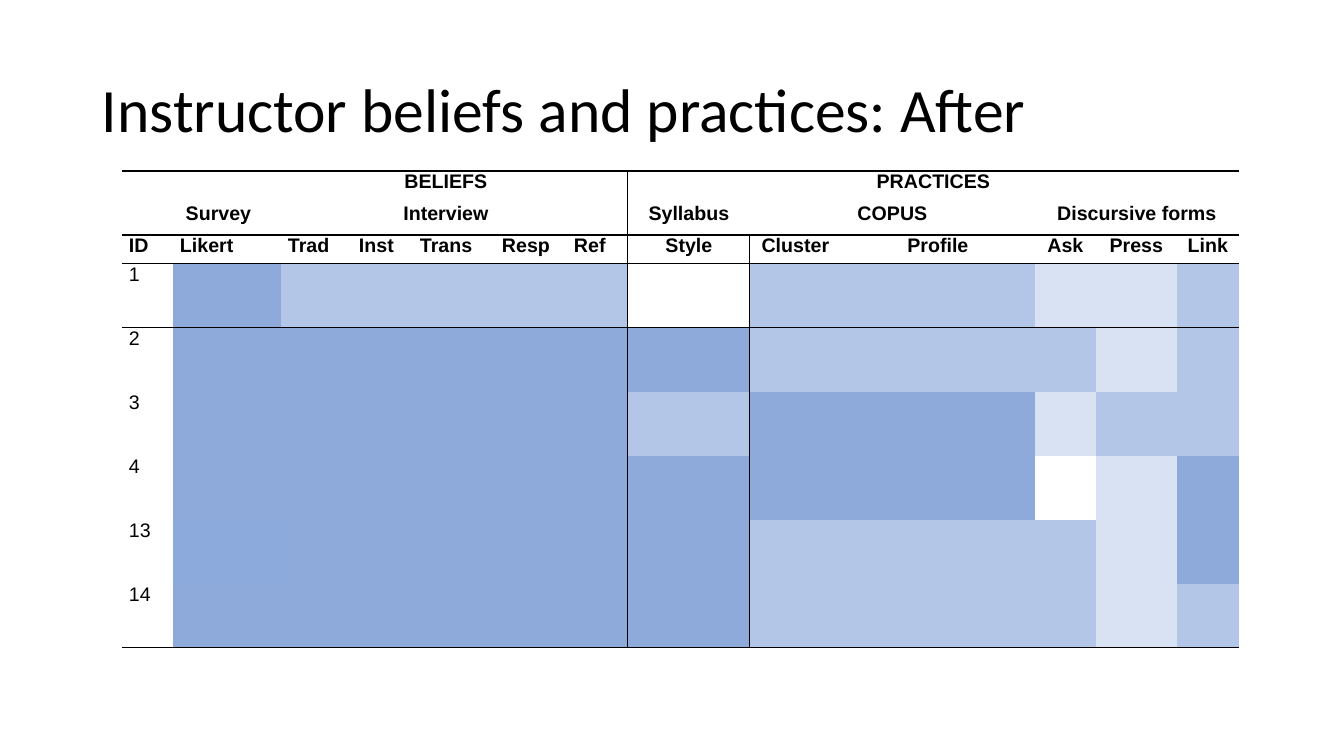
from dataclasses import dataclass

from lxml import etree
from pptx import Presentation
from pptx.dml.color import RGBColor
from pptx.enum.text import MSO_ANCHOR, PP_ALIGN
from pptx.oxml.ns import qn
from pptx.util import Pt

PX = 12192000 / 1344
LEFT, CENTER = PP_ALIGN.LEFT, PP_ALIGN.CENTER
TOP, MIDDLE = MSO_ANCHOR.TOP, MSO_ANCHOR.MIDDLE
PLAIN_TABLE_STYLE = "{2D5ABB26-0587-4C30-8999-92F81FD0307C}"


@dataclass(frozen=True)
class Theme:
    """Colours, typefaces and type sizes of the slide."""

    ink: str = "000000"
    title_face: str = "Calibri"
    table_face: str = "Arial"
    title_size: int = 44
    table_size: int = 14
    cell_gap: float = 2.4
    rule: float = 1
    fine_rule: float = 0.75


THEME = Theme()
SHADES = {"S": "8EAADB", "s": "8DAADC", "M": "B4C6E7", "L": "D9E2F3", "W": "FFFFFF"}

COLUMN_WIDTHS = [51, 91, 17, 71, 61, 82, 72, 61, 122, 91, 194, 61, 81, 62]
ROW_HEIGHTS = [32, 32, 29] + [64] * 6
PRACTICES_COLUMN = 8
RULES = {0: THEME.rule, 2: THEME.rule, 3: THEME.fine_rule, 9: THEME.rule}

GROUP_HEADINGS = [
    (0, 2, 6, "BELIEFS"),
    (0, 8, 6, "PRACTICES"),
    (1, 1, 1, "Survey"),
    (1, 2, 6, "Interview"),
    (1, 8, 1, "Syllabus"),
    (1, 9, 2, "COPUS"),
    (1, 11, 3, "Discursive forms"),
]
MEASURES = ["Likert", "Trad", "Inst", "Trans", "Resp", "Ref",
            "Style", "Cluster", "Profile", "Ask", "Press", "Link"]
INSTRUCTORS = {
    "1": "SMMMMM.MMLLM",
    "2": "SSSSSSSMMMLM",
    "3": "SSSSSSMSSLMM",
    "4": "SSSSSSSSSWLS",
    "13": "sSSSSSSMMMLS",
    "14": "SSSSSSSMMMLM",
}


def px(length):
    """Turn a length in px into EMU."""
    return round(length * PX)


def apply_format(target, formats):
    """Set each attribute named in formats on the target."""
    for name, value in formats.items():
        setattr(target, name, value)


def write_text(frame, wording, paragraph_format, font_format):
    """Write one paragraph of ink-coloured text into a text frame."""
    paragraph = frame.paragraphs[0]
    apply_format(paragraph, paragraph_format)
    run = paragraph.add_run()
    run.text = wording
    apply_format(run.font, font_format)
    run.font.color.rgb = RGBColor.from_string(THEME.ink)


def draw_title(slide, left, top, width, height):
    """Place the slide title in the given box."""
    title = slide.shapes.add_textbox(px(left), px(top), px(width), px(height))
    apply_format(title.text_frame, {"word_wrap": True, "vertical_anchor": MIDDLE})
    write_text(title.text_frame, "Instructor beliefs and practices: After",
               {"alignment": LEFT, "line_spacing": 0.9},
               {"name": THEME.title_face, "size": Pt(THEME.title_size)})


def write_cell(cell, wording, alignment, bold):
    """Write a table entry in the table typeface."""
    write_text(cell.text_frame, wording,
               {"alignment": alignment, "space_after": Pt(THEME.cell_gap)},
               {"name": THEME.table_face, "size": Pt(THEME.table_size), "bold": bold})


def rule_cell(cell, row, column):
    """Draw the rules that border one cell."""
    end_column = column + (cell.span_width if cell.is_merge_origin else 1)
    borders = {
        "a:lnL": THEME.fine_rule if column == PRACTICES_COLUMN else None,
        "a:lnR": THEME.fine_rule if end_column == PRACTICES_COLUMN else None,
        "a:lnT": RULES.get(row),
        "a:lnB": RULES.get(row + 1),
    }
    properties = cell._tc.get_or_add_tcPr()
    for tag, weight in borders.items():
        if weight:
            line = etree.SubElement(properties, qn(tag), w=str(Pt(weight)))
            ink = etree.SubElement(line, qn("a:solidFill"))
            etree.SubElement(ink, qn("a:srgbClr"), val=THEME.ink)


def fill_cell(cell, shade):
    """Fill one cell with its shade, or leave it clear."""
    if shade in SHADES:
        cell.fill.solid()
        cell.fill.fore_color.rgb = RGBColor.from_string(SHADES[shade])
    else:
        cell.fill.background()


def draw_ratings(slide, left, top):
    """Place the shaded table of beliefs and practices at the given corner."""
    frame = slide.shapes.add_table(
        len(ROW_HEIGHTS), len(COLUMN_WIDTHS), px(left), px(top),
        px(sum(COLUMN_WIDTHS)), px(sum(ROW_HEIGHTS)))
    ratings = frame.table
    apply_format(ratings, {"first_row": False, "horz_banding": False})
    ratings._tbl.tblPr.find(qn("a:tableStyleId")).text = PLAIN_TABLE_STYLE
    for column, width in zip(ratings.columns, COLUMN_WIDTHS):
        column.width = px(width)
    for row, height in zip(ratings.rows, ROW_HEIGHTS):
        row.height = px(height)

    for row, column, span, heading in GROUP_HEADINGS:
        cell = ratings.cell(row, column)
        if span > 1:
            cell.merge(ratings.cell(row, column + span - 1))
        write_cell(cell, heading, CENTER, True)

    measure_columns = [1, *range(3, len(COLUMN_WIDTHS))]
    for row in range(2, len(ROW_HEIGHTS)):
        ratings.cell(row, 1).merge(ratings.cell(row, 2))
    write_cell(ratings.cell(2, 0), "ID", LEFT, True)
    for column, measure in zip(measure_columns, MEASURES):
        alignment = CENTER if column >= PRACTICES_COLUMN else LEFT
        write_cell(ratings.cell(2, column), measure, alignment, True)

    shades = {}
    for row, (instructor, levels) in enumerate(INSTRUCTORS.items(), start=3):
        write_cell(ratings.cell(row, 0), instructor, LEFT, False)
        for column, level in zip(measure_columns, levels):
            shades[row, column] = level

    for row in range(len(ROW_HEIGHTS)):
        for column in range(len(COLUMN_WIDTHS)):
            cell = ratings.cell(row, column)
            apply_format(cell, {"margin_left": px(7), "margin_right": px(7),
                                "margin_top": 0, "margin_bottom": 0,
                                "vertical_anchor": TOP})
            rule_cell(cell, row, column)
            fill_cell(cell, shades.get((row, column)))


def main():
    """Build the slide and save it."""
    deck = Presentation()
    apply_format(deck, {"slide_width": px(1344), "slide_height": px(756)})
    slide = deck.slides.add_slide(deck.slide_layouts[6])
    draw_title(slide, 92, 40, 1159, 146)
    draw_ratings(slide, 122, 171)
    deck.save("out.pptx")


if __name__ == "__main__":
    main()
